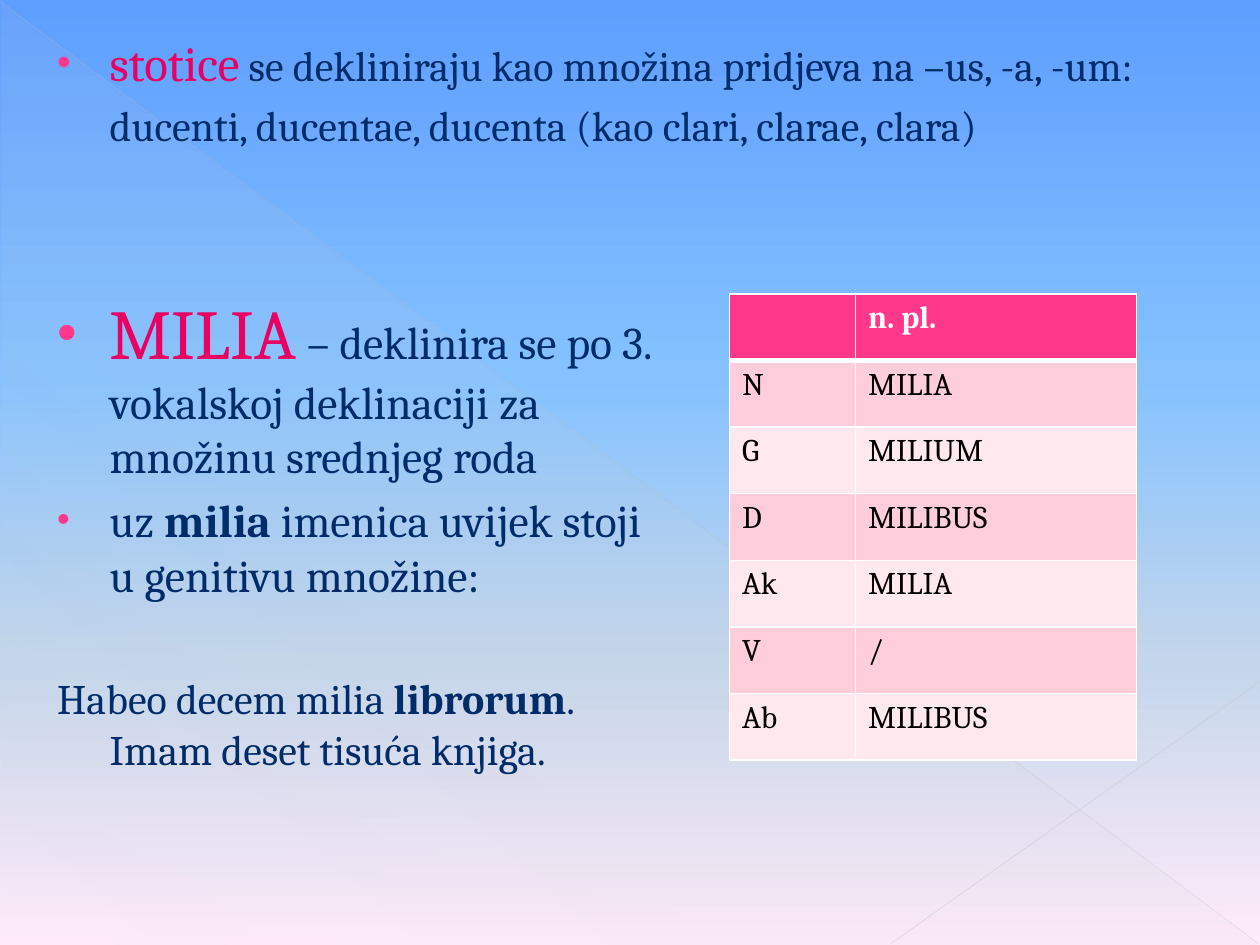
from lxml import etree
from pptx import Presentation
from pptx.dml.color import RGBColor
from pptx.enum.shapes import MSO_CONNECTOR, MSO_SHAPE
from pptx.oxml.ns import qn
from pptx.util import Pt

STRAIGHT = MSO_CONNECTOR.STRAIGHT
RIGHT_TRIANGLE = MSO_SHAPE.RIGHT_TRIANGLE
TWO_CONTENT_LAYOUT = 3

MAGENTA = RGBColor(0xE9, 0x00, 0x62)
PINK = RGBColor(0xFF, 0x38, 0x8C)
NAVY = RGBColor(0x00, 0x2D, 0x6A)
BLACK = RGBColor(0x00, 0x00, 0x00)
WHITE = RGBColor(0xFF, 0xFF, 0xFF)
ROW_FILLS = (RGBColor(0xFF, 0xCE, 0xDA), RGBColor(0xFF, 0xE8, 0xEE))
VEIL = RGBColor(0xD2, 0xD2, 0xD2)
DIAGONAL = RGBColor(0xBF, 0xBF, 0xBF)
CORNER = RGBColor(0xC6, 0xC6, 0xC6)
SKY = ((0, RGBColor(0x5E, 0x9E, 0xFF), 100), (40, RGBColor(0x85, 0xC2, 0xFF), 100),
       (70, RGBColor(0xC4, 0xD6, 0xEB), 100), (100, RGBColor(0xFF, 0xEB, 0xFA), 100))


def add_xml(parent, tag, **attributes):
    child = etree.SubElement(parent, qn(tag))
    for key, value in attributes.items():
        child.set(key, str(value))
    return child


class SlideBuilder:
    """Holds the style and the slide being built."""
    font_name = "Cambria"
    hang = 30
    margin = 35.3

    def __init__(self, slide):
        self.slide = slide

    def gradient(self, fill, owner, stops, angle):
        fill.gradient()
        gradient = owner.find(".//" + qn("a:gradFill"))
        for child in list(gradient):
            gradient.remove(child)
        stop_list = add_xml(gradient, "a:gsLst")
        for position, color, opacity in stops:
            stop = add_xml(stop_list, "a:gs", pos=position * 1000)
            tint = add_xml(stop, "a:srgbClr", val=color)
            add_xml(tint, "a:alpha", val=opacity * 1000)
        add_xml(gradient, "a:lin", ang=angle * 60000, scaled=0)

    def background(self, stops, angle):
        self.gradient(self.slide.background.fill, self.slide._element, stops, angle)

    def triangle(self, box, stops, angle):
        veil = self.slide.shapes.add_shape(RIGHT_TRIANGLE, *map(Pt, box))
        veil.shadow.inherit = False
        veil.line.fill.background()
        self.gradient(veil.fill, veil._element, stops, angle)

    def line(self, ends, color, width, opacity):
        line = self.slide.shapes.add_connector(STRAIGHT, *map(Pt, ends))
        line.line.color.rgb = color
        line.line.width = Pt(width)
        tint = line._element.spPr.find(".//" + qn("a:srgbClr"))
        add_xml(tint, "a:alpha", val=opacity * 1000)
        add_xml(line._element.spPr, "a:effectLst")

    def runs(self, paragraph, pieces):
        for text, style in pieces:
            run = paragraph.add_run()
            run.text = text
            for key, value in {"name": self.font_name, **style}.items():
                if key == "color":
                    run.font.color.rgb = value
                else:
                    setattr(run.font, key, value)

    def body(self, index, box, paragraphs):
        body = self.slide.placeholders[index]
        for key, value in zip(("left", "top", "width", "height"), box):
            setattr(body, key, Pt(value))
        frame = body.text_frame
        frame.word_wrap = True
        for number, (pieces, bullet, indent, space) in enumerate(paragraphs):
            paragraph = frame.add_paragraph() if number else frame.paragraphs[0]
            if space:
                paragraph.space_before = Pt(space)
            properties = paragraph._p.get_or_add_pPr()
            properties.set("marL", str(Pt(self.margin)))
            properties.set("indent", str(Pt(indent)))
            if bullet:
                add_xml(add_xml(properties, "a:buClr"), "a:srgbClr", val=PINK)
                add_xml(properties, "a:buSzPct", val=80000)
                add_xml(properties, "a:buFont", typeface="Arial")
                add_xml(properties, "a:buChar", char="•")
            else:
                add_xml(properties, "a:buNone")
            self.runs(paragraph, pieces)

    def cell_borders(self, cell, widths):
        properties = cell._tc.get_or_add_tcPr()
        for position, (side, width) in enumerate(widths.items()):
            border = add_xml(properties, "a:" + side, w=Pt(width))
            add_xml(add_xml(border, "a:solidFill"), "a:srgbClr", val=WHITE)
            properties.insert(position, border)

    def table(self, box, column_widths, rows):
        table = self.slide.shapes.add_table(
            len(rows), len(column_widths), *map(Pt, box)).table
        for column, width in zip(table.columns, column_widths):
            column.width = Pt(width)
        for r, row in enumerate(rows):
            table.rows[r].height = Pt(box[3] / len(rows))
            header = r == 0
            style = {"size": Pt(18), "bold": header, "color": WHITE if header else BLACK}
            widths = {"lnL": 1, "lnR": 1, "lnT": 3 if r == 1 else 1,
                      "lnB": 3 if header else 1}
            for c, text in enumerate(row):
                cell = table.cell(r, c)
                cell.fill.solid()
                cell.fill.fore_color.rgb = PINK if header else ROW_FILLS[(r - 1) % 2]
                self.cell_borders(cell, widths)
                if text:
                    self.runs(cell.text_frame.paragraphs[0], [(text, style)])


def main():
    deck = Presentation()
    deck.slide_width, deck.slide_height = Pt(720), Pt(540)
    slide = deck.slides.add_slide(deck.slide_layouts[TWO_CONTENT_LAYOUT])
    for placeholder in list(slide.placeholders):
        if placeholder.placeholder_format.idx not in (1, 2):
            placeholder._element.getparent().remove(placeholder._element)
    builder = SlideBuilder(slide)

    # Backdrop
    builder.background(SKY, 90)
    builder.triangle((0.7, 1.4, 718.6, 538.6),
                     ((0, VEIL, 10), (70, VEIL, 8), (100, VEIL, 1)), 133)
    builder.line((0, 0.7, 719.3, 539.3), DIAGONAL, 0.39, 35)
    builder.line((720, 389.5, 509, 539.3), CORNER, 0.47, 45)
    # Body text sits in front of the backdrop
    for placeholder in list(slide.placeholders):
        slide.shapes._spTree.append(placeholder._element)

    small = {"size": Pt(24), "color": NAVY}
    large = {"size": Pt(26), "color": NAVY}
    hang = -builder.hang

    # Hundreds
    builder.body(1, (20.2, 15.1, 674.6, 130.3), [
        ([("stotice", {"size": Pt(28), "color": MAGENTA}),
          (" se dekliniraju kao množina pridjeva na –us, -a, -um:", small)],
         True, hang, None),
        ([("ducenti, ducentae, ducenta (kao clari, clarae, clara)", small)],
         False, 0, None),
    ])

    # Thousands, with the example set apart
    builder.body(2, (20.2, 162, 368.6, 329.8), [
        ([("MILIA", {"size": Pt(40), "color": MAGENTA}),
          (" – deklinira se po 3. vokalskoj deklinaciji za množinu srednjeg roda", large)],
         True, hang, None),
        ([("uz ", large), ("milia", {**large, "bold": True}),
          (" imenica uvijek stoji u genitivu množine:", large)],
         True, hang, None),
        ([("Habeo decem milia ", small), ("librorum", {**small, "bold": True}),
          (". Imam deset tisuća knjiga.", small)],
         False, hang, 41),
    ])

    # Declension of milia
    builder.table((416.9, 168, 232.6, 266.4), (72, 160.6), [
        ("", "n. pl."), ("N", "MILIA"), ("G", "MILIUM"), ("D", "MILIBUS"),
        ("Ak", "MILIA"), ("V", "/"), ("Ab", "MILIBUS"),
    ])
    deck.save("out.pptx")


if __name__ == "__main__":
    main()
